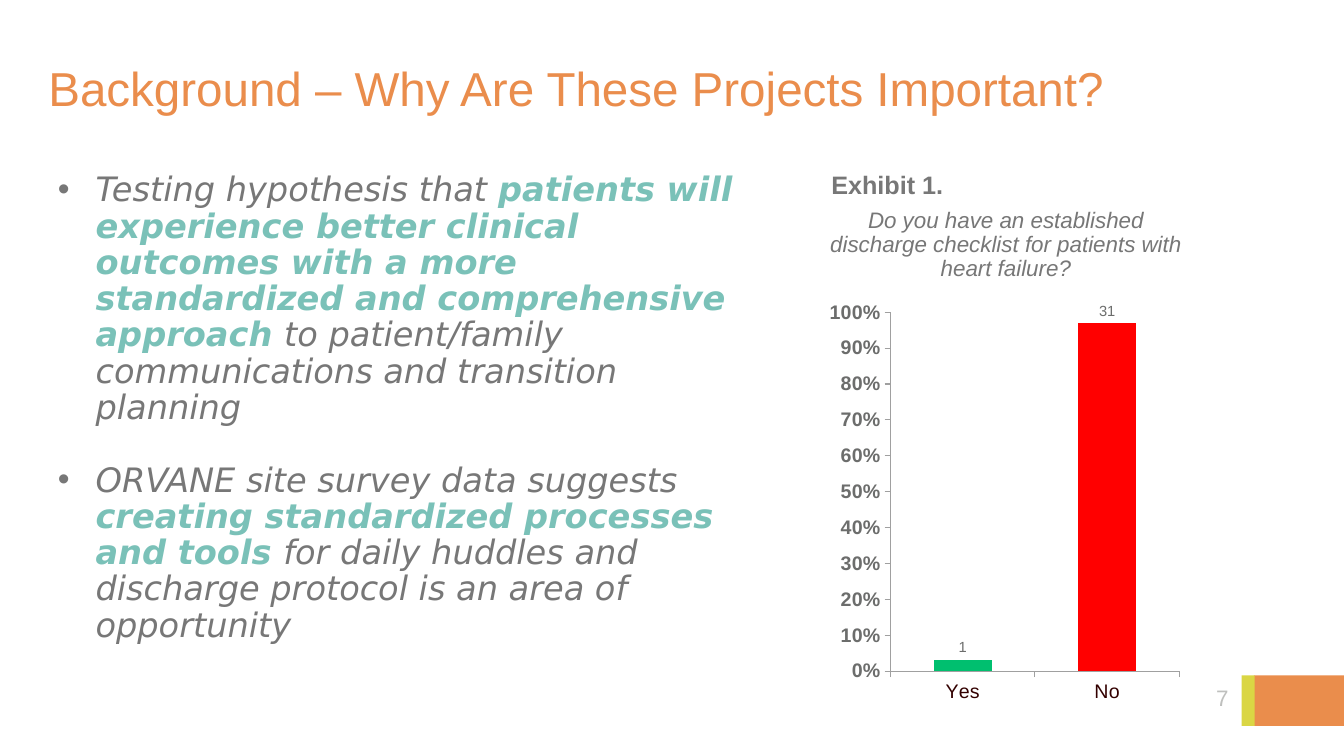
"""Build the slide on why the discharge projects matter."""
from lxml import etree
from pptx import Presentation
from pptx.chart.data import CategoryChartData
from pptx.dml.color import RGBColor
from pptx.enum.chart import XL_CHART_TYPE, XL_LABEL_POSITION, XL_TICK_MARK
from pptx.enum.shapes import MSO_SHAPE
from pptx.enum.text import MSO_ANCHOR, PP_ALIGN
from pptx.oxml import parse_xml
from pptx.oxml.ns import nsdecls, qn
from pptx.util import Cm, Pt

LEFT, CENTER, RIGHT = PP_ALIGN.LEFT, PP_ALIGN.CENTER, PP_ALIGN.RIGHT
TOP, MIDDLE, BOTTOM = MSO_ANCHOR.TOP, MSO_ANCHOR.MIDDLE, MSO_ANCHOR.BOTTOM
COLUMN = XL_CHART_TYPE.COLUMN_CLUSTERED
OUTSIDE_END = XL_LABEL_POSITION.OUTSIDE_END
TICK_OUT, TICK_NONE = XL_TICK_MARK.OUTSIDE, XL_TICK_MARK.NONE
RECTANGLE = MSO_SHAPE.RECTANGLE

COLORS = {
    "orange": "EA8D4C", "lime": "DAD644", "teal": "7AC1B8", "text": "777777",
    "number": "BFC0BE", "chart": "6C6D6C", "category": "330000",
    "axis": "A0A0A0", "yes": "00BF6F", "no": "FF0000",
}
BODY_FONT = "DejaVu Sans"
HEADING_FONT = "Arial"

CORNER_BLOCKS = [
    ("orange", (31.6, 17.02, 2.27, 1.27)),
    ("lime", (31.29, 17.02, 0.33, 1.27)),
]
CAPTIONS = [
    ("7", (28.32, 17.02, 2.64, 1.14), RIGHT, MIDDLE, 1.0,
     {"size": 16, "color": "number"}),
    ("Background – Why Are These Projects Important?",
     (0.97, 0.89, 30.56, 2.18), LEFT, BOTTOM, 0.9,
     {"size": 34, "color": "orange"}),
    ("Do you have an established discharge checklist for patients with heart failure?",
     (20.42, 5.15, 9.86, 2.11), CENTER, TOP, 0.9,
     {"size": 16, "color": "text", "italic": True}),
    ("Exhibit 1.", (20.7, 4.24, 3.71, 0.81), LEFT, TOP, 0.9,
     {"size": 18, "color": "text", "bold": True}),
]
REASONS = [
    [("Testing hypothesis that ", False),
     ("patients will experience better clinical outcomes with a more "
      "standardized and comprehensive approach ", True),
     ("to patient/family communications and transition planning", False)],
    [("ORVANE site survey data suggests ", False),
     ("creating standardized processes and tools ", True),
     ("for daily huddles and discharge protocol is an area of opportunity", False)],
]
REASONS_BOX = (1.21, 4.23, 18.36, 13.49)
REASON_GAP = 26
REASON_INDENT = Cm(0.95)
ANSWERS = [("Yes", 0.0313, "1", "yes"), ("No", 0.9688, "31", "no")]
ANSWERS_BOX = (20.7, 7.26, 9.58, 10.87)
PLOT_AREA = {"x": 0.182, "y": 0.056, "w": 0.76, "h": 0.832}


def rgb(name):
    return RGBColor.from_string(COLORS[name])


def style(font, size, color, **flags):
    formats = {"name": HEADING_FONT, "size": Pt(size), "bold": False, **flags}
    for attribute, value in formats.items():
        setattr(font, attribute, value)
    font.color.rgb = rgb(color)


def add_frame(slide, box, anchor=TOP):
    frame = slide.shapes.add_textbox(*map(Cm, box)).text_frame
    frame.word_wrap = True
    frame.vertical_anchor = anchor
    return frame


def add_corner(slide):
    for color, box in CORNER_BLOCKS:
        block = slide.shapes.add_shape(RECTANGLE, *map(Cm, box))
        block.shadow.inherit = False
        block.fill.solid()
        block.fill.fore_color.rgb = rgb(color)
        block.line.fill.background()


def add_captions(slide):
    for text, box, align, anchor, spacing, formats in CAPTIONS:
        frame = add_frame(slide, box, anchor)
        if align == RIGHT:
            frame.margin_right = 0
        line = frame.paragraphs[0]
        line.alignment = align
        line.line_spacing = spacing
        run = line.add_run()
        run.text = text
        style(run.font, **formats)


def add_reasons(slide):
    frame = add_frame(slide, REASONS_BOX)
    for index, reason in enumerate(REASONS):
        line = frame.add_paragraph() if index else frame.paragraphs[0]
        line.line_spacing = 0.9
        line.space_before = Pt(REASON_GAP if index else 0)
        for text, stressed in reason:
            run = line.add_run()
            run.text = text
            style(run.font, 24, "teal" if stressed else "text",
                  name=BODY_FONT, bold=stressed, italic=True)
        properties = line._p.get_or_add_pPr()
        properties.set("marL", str(REASON_INDENT))
        properties.set("indent", str(-REASON_INDENT))
        etree.SubElement(properties, qn("a:buFont")).set("typeface", HEADING_FONT)
        etree.SubElement(properties, qn("a:buChar")).set("char", "•")


def place_plot(chart):
    edges = "".join(f'<c:{edge}Mode val="edge"/>' for edge in "xy")
    sizes = "".join(f'<c:{key} val="{value}"/>' for key, value in PLOT_AREA.items())
    layout = parse_xml(
        f'<c:layout {nsdecls("c")}><c:manualLayout><c:layoutTarget val="inner"/>'
        f"{edges}{sizes}</c:manualLayout></c:layout>")
    plot_area = chart._chartSpace.chart.plotArea
    for previous in plot_area.findall(qn("c:layout")):
        plot_area.remove(previous)
    plot_area.insert(0, layout)


def add_answers(slide):
    answers = CategoryChartData(number_format="0.00%")
    answers.categories = [answer[0] for answer in ANSWERS]
    answers.add_series("Series 1", [answer[1] for answer in ANSWERS])
    chart = slide.shapes.add_chart(COLUMN, *map(Cm, ANSWERS_BOX), answers).chart
    chart.has_legend = False
    chart.has_title = False
    style(chart.font, 10.5, "chart")
    place_plot(chart)

    for axis, color, bold in [(chart.category_axis, "category", False),
                              (chart.value_axis, "chart", True)]:
        axis.has_major_gridlines = False
        axis.major_tick_mark = TICK_OUT
        axis.minor_tick_mark = TICK_NONE
        axis.format.line.color.rgb = rgb("axis")
        axis.format.line.width = Pt(0.75)
        style(axis.tick_labels.font, 14, color, bold=bold)
    scale = {"minimum_scale": 0, "maximum_scale": 1, "major_unit": 0.1}
    for attribute, value in scale.items():
        setattr(chart.value_axis, attribute, value)
    chart.value_axis.tick_labels.number_format = "0%"
    chart.value_axis.tick_labels.number_format_is_linked = False

    plot = chart.plots[0]
    plot.gap_width = 150
    plot.vary_by_categories = False
    series = plot.series[0]
    series.format.fill.solid()
    series.format.fill.fore_color.rgb = rgb("yes")
    labels = series.data_labels
    labels.show_value = True
    labels.position = OUTSIDE_END
    labels.number_format = "0.00%"
    labels.number_format_is_linked = False
    for index, (_, _, count, color) in enumerate(ANSWERS):
        point = series.points[index]
        point.format.fill.solid()
        point.format.fill.fore_color.rgb = rgb(color)
        run = point.data_label.text_frame.paragraphs[0].add_run()
        run.text = count
        style(run.font, 10.5, "chart")
        point.data_label.position = OUTSIDE_END


def main():
    deck = Presentation()
    deck.slide_width, deck.slide_height = Cm(33.87), Cm(19.05)
    slide = deck.slides.add_slide(deck.slide_layouts[6])
    add_corner(slide)
    add_captions(slide)
    add_answers(slide)
    add_reasons(slide)
    deck.save("out.pptx")


if __name__ == "__main__":
    main()
